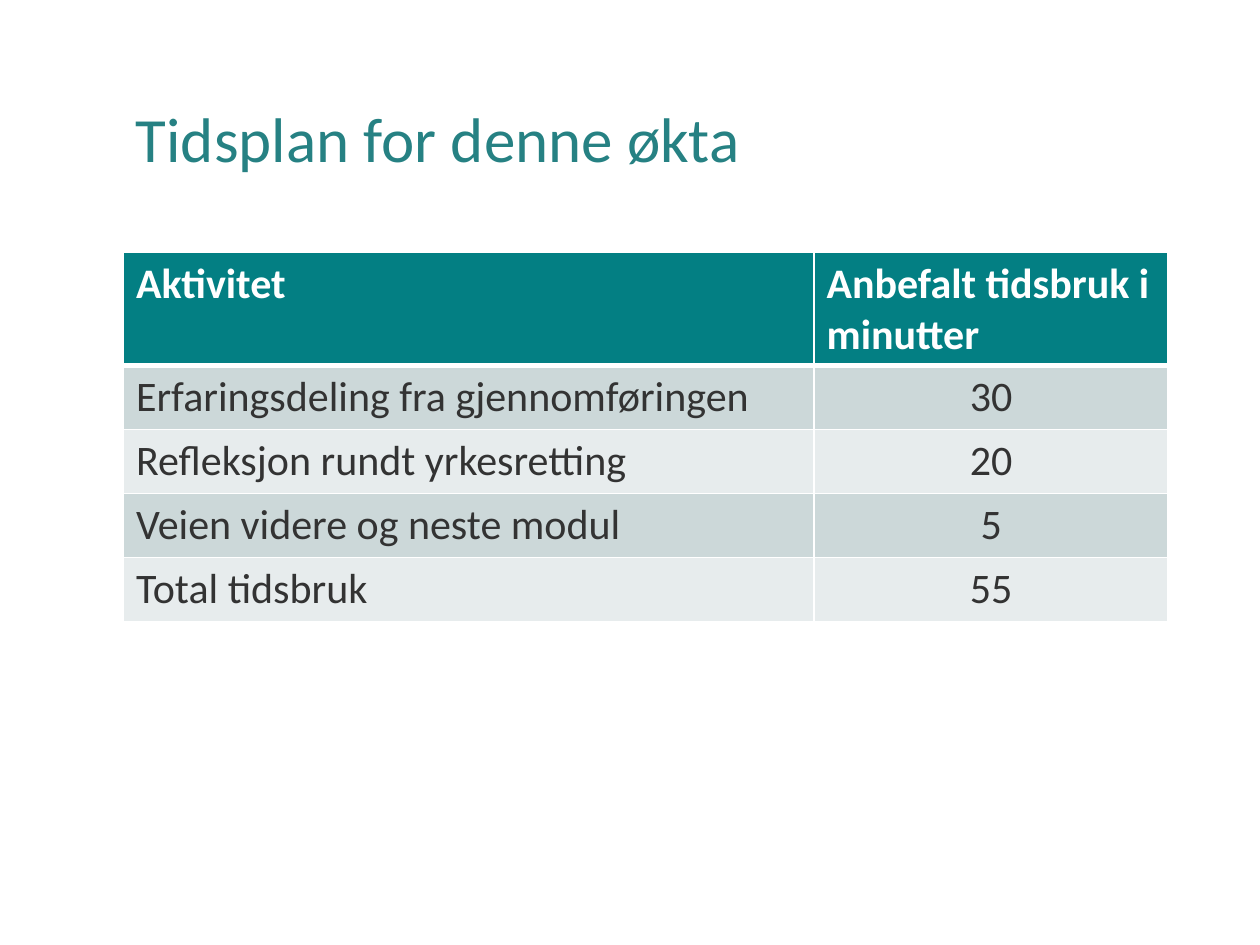
from dataclasses import dataclass
from typing import NamedTuple

from pptx import Presentation
from pptx.dml.color import RGBColor
from pptx.enum.text import MSO_ANCHOR, PP_ALIGN
from pptx.oxml import parse_xml
from pptx.oxml.ns import nsdecls
from pptx.slide import Slide
from pptx.table import _Cell
from pptx.util import Cm, Pt


@dataclass(frozen=True)
class Theme:
    font: str = "Calibri"
    title_size: int = 36
    table_size: int = 24
    title: str = "268183"
    header: str = "037F83"
    header_text: str = "FFFFFF"
    body_text: str = "333333"
    bands: tuple[str, str] = ("CCD8D9", "E7ECED")
    border: str = "FFFFFF"
    border_width: int = 1
    header_rule: int = 3


class Activity(NamedTuple):
    name: str
    minutes: str


THEME = Theme()
HEADER = Activity("Aktivitet", "Anbefalt tidsbruk i minutter")
ACTIVITIES = [
    Activity("Erfaringsdeling fra gjennomføringen", "30"),
    Activity("Refleksjon rundt yrkesretting", "20"),
    Activity("Veien videre og neste modul", "5"),
    Activity("Total tidsbruk", "55"),
]
LEFT = Cm(2.49)
COLUMN_WIDTHS = (Cm(13.92), Cm(7.14))
WIDTH = sum(COLUMN_WIDTHS)
HEADER_HEIGHT, ROW_HEIGHT = Cm(2.27), Cm(1.29)


def add_title(s: Slide, text: str) -> None:
    tf = s.shapes.add_textbox(LEFT, Cm(1.02), WIDTH, Cm(3.68)).text_frame
    tf.word_wrap = True
    tf.vertical_anchor = MSO_ANCHOR.MIDDLE
    p = tf.paragraphs[0]
    p.text = text
    p.line_spacing = 0.9
    p.font.name = THEME.font
    p.font.size = Pt(THEME.title_size)
    p.font.color.rgb = RGBColor.from_string(THEME.title)


def set_borders(cell: _Cell, top: int, bottom: int) -> None:
    """Draw the four cell borders; widths are in points."""
    side = THEME.border_width
    widths = {"lnL": side, "lnR": side, "lnT": top, "lnB": bottom}
    tcPr = cell._tc.get_or_add_tcPr()
    for i, (tag, width) in enumerate(widths.items()):
        tcPr.insert(i, parse_xml(
            f'<a:{tag} {nsdecls("a")} w="{Pt(width)}"><a:solidFill>'
            f'<a:srgbClr val="{THEME.border}"/></a:solidFill></a:{tag}>'))


def fill_cell(cell: _Cell, text: str, row: int, column: int) -> None:
    is_header = row == 0
    fill = THEME.header if is_header else THEME.bands[(row - 1) % 2]
    color = THEME.header_text if is_header else THEME.body_text
    cell.fill.solid()
    cell.fill.fore_color.rgb = RGBColor.from_string(fill)
    p = cell.text_frame.paragraphs[0]
    p.text = text
    if column == 1 and not is_header:
        p.alignment = PP_ALIGN.CENTER
    p.font.name = THEME.font
    p.font.size = Pt(THEME.table_size)
    p.font.bold = is_header
    p.font.color.rgb = RGBColor.from_string(color)
    set_borders(cell,
                top=THEME.header_rule if row == 1 else THEME.border_width,
                bottom=THEME.header_rule if is_header else THEME.border_width)


def add_schedule(s: Slide, activities: list[Activity]) -> None:
    rows = [HEADER, *activities]
    height = HEADER_HEIGHT + ROW_HEIGHT * len(activities)
    table = s.shapes.add_table(len(rows), len(COLUMN_WIDTHS),
                               LEFT, Cm(5.08), WIDTH, height).table
    for column, width in zip(table.columns, COLUMN_WIDTHS):
        column.width = width
    for i, activity in enumerate(rows):
        table.rows[i].height = ROW_HEIGHT if i else HEADER_HEIGHT
        for j, text in enumerate(activity):
            fill_cell(table.cell(i, j), text, i, j)


def main() -> None:
    prs = Presentation()
    prs.slide_width, prs.slide_height = Cm(25.4), Cm(19.05)
    s = prs.slides.add_slide(prs.slide_layouts[6])
    add_title(s, "Tidsplan for denne økta")
    add_schedule(s, ACTIVITIES)
    prs.save("out.pptx")


if __name__ == "__main__":
    main()
